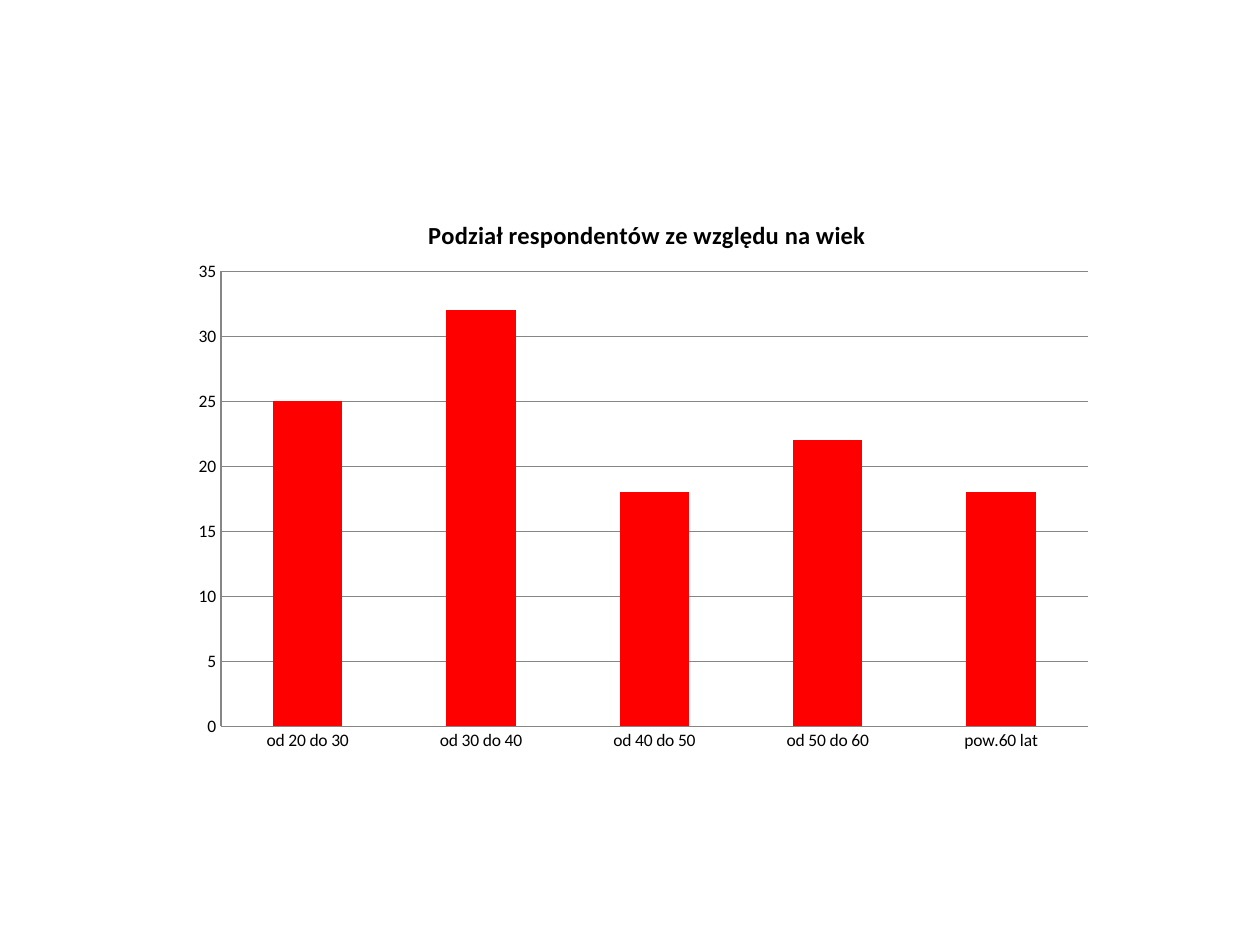
from lxml import etree
from pptx import Presentation
from pptx.chart.data import CategoryChartData
from pptx.dml.color import RGBColor
from pptx.enum.chart import XL_CHART_TYPE, XL_TICK_MARK
from pptx.oxml.ns import qn
from pptx.util import Cm, Pt

COLUMN = XL_CHART_TYPE.COLUMN_CLUSTERED
NO_TICK = XL_TICK_MARK.NONE
COLORS = {"text": "000000", "bar": "FF0000", "line": "868686"}


def color(name):
    return RGBColor.from_string(COLORS[name])


def style(font, face="Calibri", size=10, bold=False, tint="text"):
    font.name = face
    font.size = Pt(size)
    font.bold = bold
    font.color.rgb = color(tint)


def write(frame, text, **form):
    run = frame.paragraphs[0].add_run()
    run.text = text
    style(run.font, **form)


def place(parent, index, inner=False, **spots):
    for old in parent.findall(qn("c:layout")):
        parent.remove(old)
    layout = etree.Element(qn("c:layout"))
    manual = etree.SubElement(layout, qn("c:manualLayout"))
    if inner:
        etree.SubElement(manual, qn("c:layoutTarget")).set("val", "inner")
    for key in ("x", "y"):
        etree.SubElement(manual, qn(f"c:{key}Mode")).set("val", "edge")
    for key, value in spots.items():
        etree.SubElement(manual, qn(f"c:{key}")).set("val", str(value))
    parent.insert(index, layout)


class Deck:
    def __init__(self, width, height):
        self.file = Presentation()
        self.file.slide_width = width
        self.file.slide_height = height
        self.slide = self.file.slides.add_slide(self.file.slide_layouts[6])

    def line(self, form):
        form.line.color.rgb = color("line")
        form.line.width = Pt(0.75)

    def chart(self, title, groups, counts, box):
        data = CategoryChartData()
        data.categories = groups
        data.add_series("Series 1", counts)
        chart = self.slide.shapes.add_chart(COLUMN, *box, data).chart
        style(chart.font)
        chart.has_legend = False
        chart.has_title = True
        write(chart.chart_title.text_frame, title, size=14, bold=True)
        chart.chart_title.include_in_layout = False

        plot = chart.plots[0]
        plot.vary_by_categories = False
        plot.gap_width = 150
        bars = plot.series[0].format.fill
        bars.solid()
        bars.fore_color.rgb = color("bar")

        for axis in (chart.category_axis, chart.value_axis):
            axis.major_tick_mark = NO_TICK
            axis.minor_tick_mark = NO_TICK
            self.line(axis.format)
        scale = chart.value_axis
        scale.minimum_scale = 0
        scale.maximum_scale = 35
        scale.major_unit = 5
        scale.has_major_gridlines = True
        self.line(scale.major_gridlines.format)

        root = chart.element
        place(root.find(f".//{qn('c:title')}"), 1, x=0.26, y=0.05)
        area = root.find(f".//{qn('c:plotArea')}")
        place(area, 0, inner=True, x=0.04, y=0.15, w=0.94, h=0.79)


def main():
    deck = Deck(Cm(25.4), Cm(19.05))
    deck.chart(
        "Podział respondentów ze względu na wiek",
        ["od 20 do 30", "od 30 do 40", "od 40 do 50", "od 50 do 60", "pow.60 lat"],
        [25, 32, 18, 22, 18],
        (Cm(3.71), Cm(3.73), Cm(18.59), Cm(11.61)),
    )
    deck.file.save("out.pptx")


if __name__ == "__main__":
    main()
